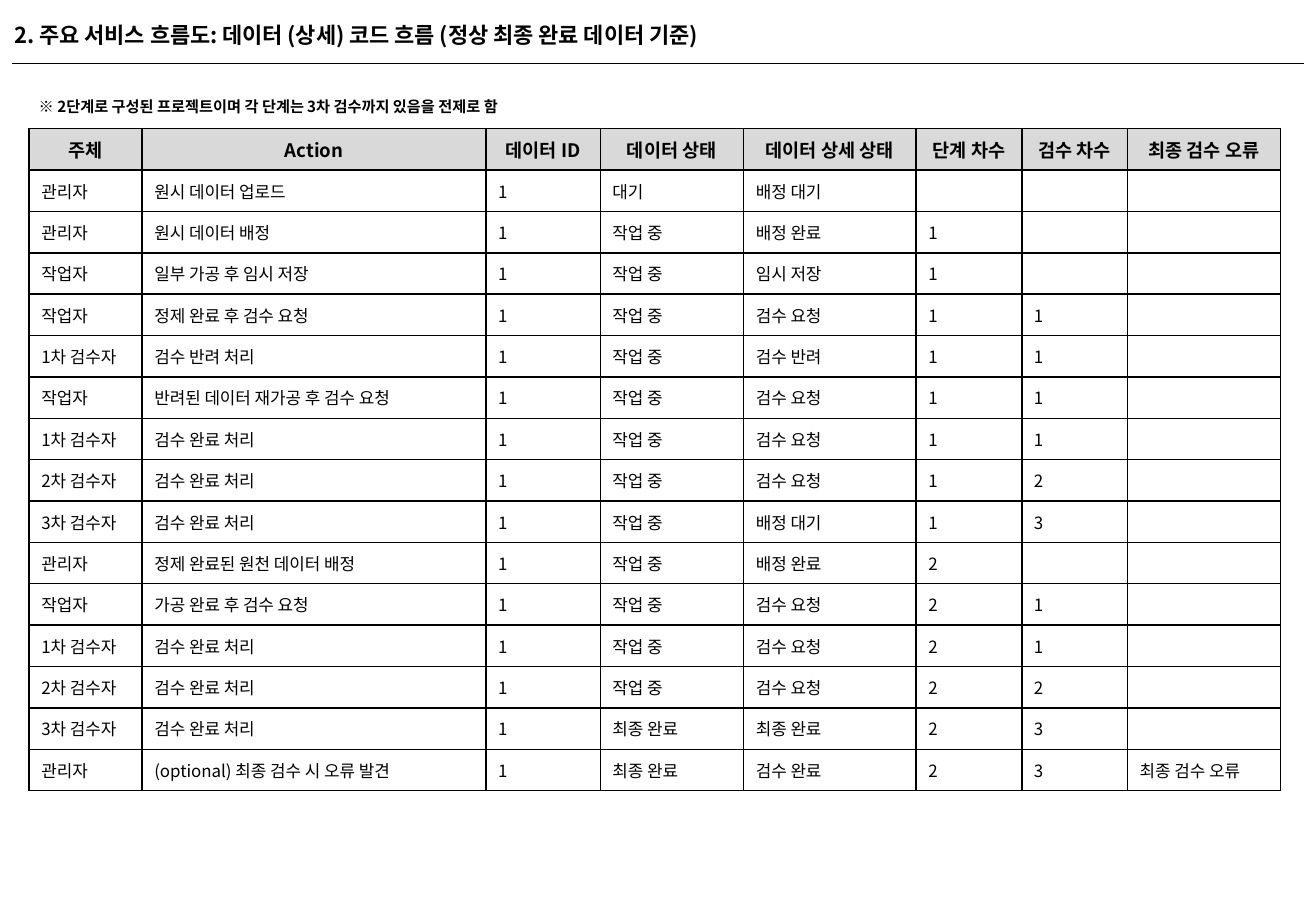
from lxml.etree import SubElement
from pptx import Presentation
from pptx.dml.color import RGBColor
from pptx.enum.shapes import MSO_CONNECTOR
from pptx.enum.text import MSO_ANCHOR, MSO_AUTO_SIZE, PP_ALIGN
from pptx.oxml.ns import qn
from pptx.util import Inches, Pt

COLUMN_WIDTHS = [0.93, 2.83, 0.94, 1.18, 1.42, 0.87, 0.87, 1.26]
HEADERS = ["주체", "Action", "데이터 ID", "데이터 상태", "데이터 상세 상태",
           "단계 차수", "검수 차수", "최종 검수 오류"]
STEPS = [
    ["관리자", "원시 데이터 업로드", "1", "대기", "배정 대기", "", "", ""],
    ["관리자", "원시 데이터 배정", "1", "작업 중", "배정 완료", "1", "", ""],
    ["작업자", "일부 가공 후 임시 저장", "1", "작업 중", "임시 저장", "1", "", ""],
    ["작업자", "정제 완료 후 검수 요청", "1", "작업 중", "검수 요청", "1", "1", ""],
    ["1차 검수자", "검수 반려 처리", "1", "작업 중", "검수 반려", "1", "1", ""],
    ["작업자", "반려된 데이터 재가공 후 검수 요청", "1", "작업 중", "검수 요청", "1", "1", ""],
    ["1차 검수자", "검수 완료 처리", "1", "작업 중", "검수 요청", "1", "1", ""],
    ["2차 검수자", "검수 완료 처리", "1", "작업 중", "검수 요청", "1", "2", ""],
    ["3차 검수자", "검수 완료 처리", "1", "작업 중", "배정 대기", "1", "3", ""],
    ["관리자", "정제 완료된 원천 데이터 배정", "1", "작업 중", "배정 완료", "2", "", ""],
    ["작업자", "가공 완료 후 검수 요청", "1", "작업 중", "검수 요청", "2", "1", ""],
    ["1차 검수자", "검수 완료 처리", "1", "작업 중", "검수 요청", "2", "1", ""],
    ["2차 검수자", "검수 완료 처리", "1", "작업 중", "검수 요청", "2", "2", ""],
    ["3차 검수자", "검수 완료 처리", "1", "최종 완료", "최종 완료", "2", "3", ""],
    ["관리자", "(optional) 최종 검수 시 오류 발견", "1", "최종 완료", "검수 완료", "2", "3",
     "최종 검수 오류"],
]


def rgb(color):
    return RGBColor.from_string(color)


class SlideBuilder:
    font = "Noto Sans CJK KR"
    ink = "000000"
    header_fill = "D9D9D9"

    def __init__(self, s):
        self.s = s

    def add_text(self, tf, text, size, bold=False, align=PP_ALIGN.LEFT, spacing=None):
        p = tf.paragraphs[0]
        p.alignment = align
        p.line_spacing = spacing
        if not text:
            # An empty cell would otherwise take the default size and stretch its row
            SubElement(p._p, qn("a:endParaRPr"), sz=str(size * 100))
            return
        r = p.add_run()
        r.text = text
        r.font.name = self.font
        r.font.size = Pt(size)
        r.font.bold = bold
        r.font.color.rgb = rgb(self.ink)
        SubElement(r._r.get_or_add_rPr(), qn("a:ea"), typeface=self.font)

    def text_box(self, left, top, width, height, text, wrap=True, **style):
        box = self.s.shapes.add_textbox(Inches(left), Inches(top), Inches(width), Inches(height))
        tf = box.text_frame
        tf.word_wrap = wrap
        tf.auto_size = MSO_AUTO_SIZE.SHAPE_TO_FIT_TEXT
        self.add_text(tf, text, **style)

    def rule(self, left, right, y, weight):
        line = self.s.shapes.add_connector(
            MSO_CONNECTOR.STRAIGHT, Inches(left), Inches(y), Inches(right), Inches(y))
        line.line.color.rgb = rgb(self.ink)
        line.line.width = Pt(weight)
        SubElement(line._element.spPr, qn("a:effectLst"))

    def border(self, cell, weight):
        tcPr = cell._tc.get_or_add_tcPr()
        for i, side in enumerate(("a:lnL", "a:lnR", "a:lnT", "a:lnB")):
            ln = tcPr.makeelement(qn(side), {"w": str(Pt(weight))})
            fill = SubElement(ln, qn("a:solidFill"))
            SubElement(fill, qn("a:srgbClr"), val=self.ink)
            tcPr.insert(i, ln)

    def table(self, left, top, height, widths, headers, rows):
        grid = [headers, *rows]
        frame = self.s.shapes.add_table(
            len(grid), len(widths), Inches(left), Inches(top),
            Inches(sum(widths)), Inches(height))
        table = frame.table
        table.horz_banding = False
        for column, width in zip(table.columns, widths):
            column.width = Inches(width)
        for i, values in enumerate(grid):
            table.rows[i].height = Inches(height / len(grid))
            for j, value in enumerate(values):
                cell = table.cell(i, j)
                cell.vertical_anchor = MSO_ANCHOR.MIDDLE
                if i == 0:
                    cell.fill.solid()
                    cell.fill.fore_color.rgb = rgb(self.header_fill)
                    self.add_text(cell.text_frame, value, 11, bold=True, align=PP_ALIGN.CENTER)
                else:
                    cell.fill.background()
                    self.add_text(cell.text_frame, value, 10)
                self.border(cell, 1)


def main():
    prs = Presentation()
    prs.slide_width, prs.slide_height = Inches(10.83), Inches(7.5)
    slide = SlideBuilder(prs.slides.add_slide(prs.slide_layouts[6]))
    slide.text_box(0.02, 0.13, 10.52, 0.32,
                   "2. 주요 서비스 흐름도: 데이터 (상세) 코드 흐름 (정상 최종 완료 데이터 기준)",
                   size=13, bold=True)
    slide.rule(0.1, 10.73, 0.52, 0.75)
    slide.table(0.24, 1.06, 5.45, COLUMN_WIDTHS, HEADERS, STEPS)
    slide.text_box(0.22, 0.68, 4.42, 0.3,
                   "※ 2단계로 구성된 프로젝트이며 각 단계는 3차 검수까지 있음을 전제로 함",
                   wrap=False, size=9, bold=True, spacing=1.5)
    prs.save("out.pptx")


if __name__ == "__main__":
    main()
